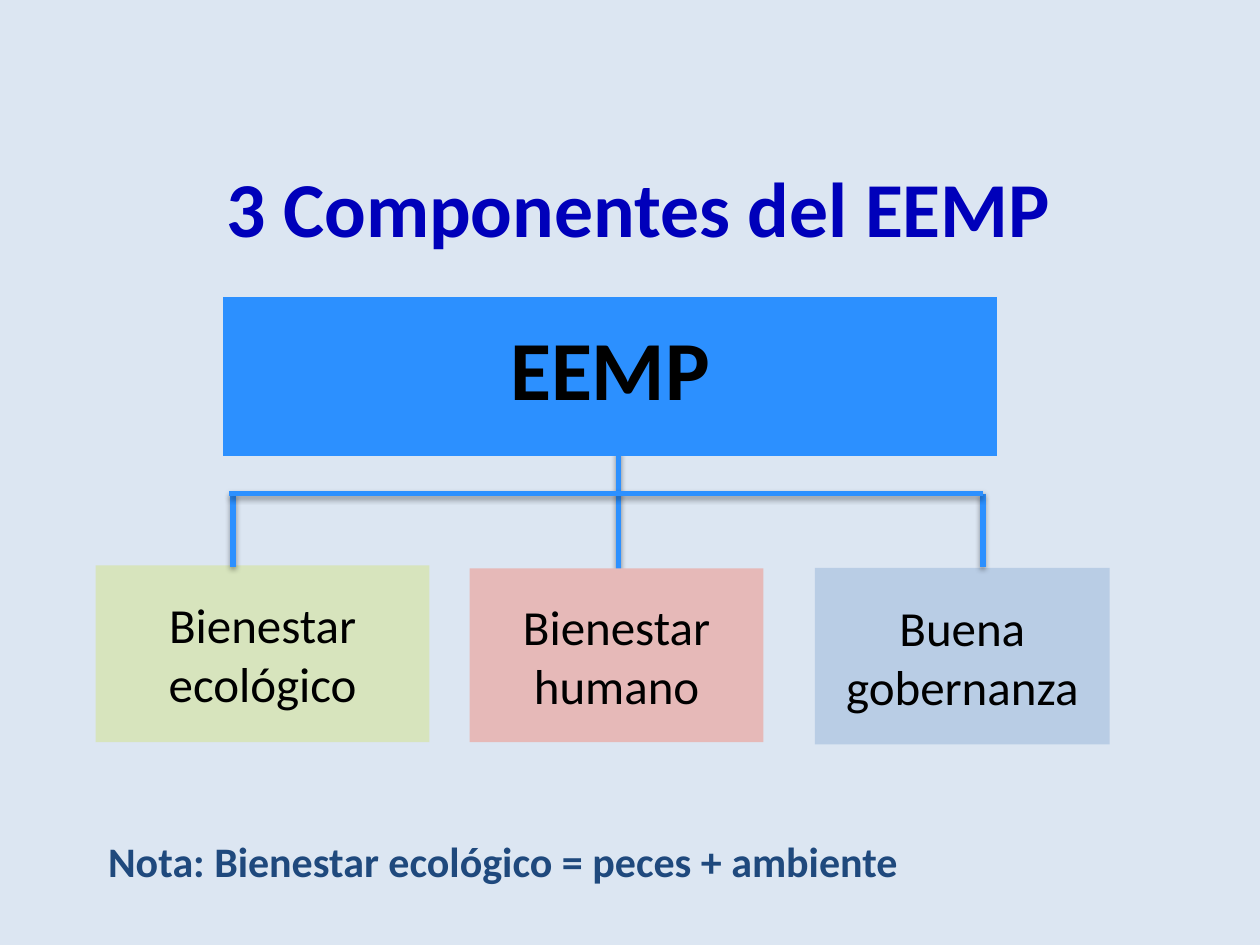
import pptx
import pptx.dml.color
import pptx.enum.shapes
import pptx.enum.text
import pptx.oxml
import pptx.oxml.ns
import pptx.util

Cm = pptx.util.Cm
Pt = pptx.util.Pt
RGBColor = pptx.dml.color.RGBColor
PP_ALIGN = pptx.enum.text.PP_ALIGN
MSO_ANCHOR = pptx.enum.text.MSO_ANCHOR

BACKGROUND = RGBColor(0xDC, 0xE6, 0xF2)
BLUE = RGBColor(0x2C, 0x90, 0xFF)
GREEN = RGBColor(0xD7, 0xE4, 0xBD)
PINK = RGBColor(0xE6, 0xB9, 0xB8)
PALE_BLUE = RGBColor(0xB9, 0xCD, 0xE5)
TITLE_BLUE = RGBColor(0x00, 0x00, 0xBA)
NOTE_BLUE = RGBColor(0x1F, 0x49, 0x7D)
BLACK = RGBColor(0, 0, 0)

LINE_SHADOW = (
    f'<a:effectLst {pptx.oxml.ns.nsdecls("a")}>'
    '<a:outerShdw blurRad="39370" dist="20320" dir="5400000" rotWithShape="0">'
    '<a:srgbClr val="000000"><a:alpha val="38000"/></a:srgbClr>'
    '</a:outerShdw></a:effectLst>'
)


def apply_format(target, values):
    for attribute, value in values.items():
        setattr(target, attribute, value)


def write_text(frame, text, size, color, bold=False, frame_format=None, paragraph_format=None):
    apply_format(frame, {"word_wrap": True} | (frame_format or {}))
    paragraph = frame.paragraphs[0]
    apply_format(paragraph, {"alignment": PP_ALIGN.CENTER} | (paragraph_format or {}))
    run = paragraph.add_run()
    run.text = text
    apply_format(run.font, {"name": "Calibri", "size": Pt(size), "bold": bold})
    run.font.color.rgb = color


def add_label(slide, bounds, text, size, color, **formats):
    label = slide.shapes.add_textbox(*map(Cm, bounds))
    write_text(label.text_frame, text, size, color, bold=True, **formats)


def add_box(slide, bounds, fill, text, size, **formats):
    box = slide.shapes.add_shape(
        pptx.enum.shapes.MSO_SHAPE.RECTANGLE, *map(Cm, bounds))
    box.shadow.inherit = False
    box.fill.solid()
    box.fill.fore_color.rgb = fill
    box.line.fill.background()
    write_text(box.text_frame, text, size, BLACK,
               frame_format={"vertical_anchor": MSO_ANCHOR.MIDDLE}, **formats)


def add_branch(slide, ends, width=3.25):
    """Draw one shadowed line of the tree from (x1, y1) to (x2, y2)."""
    branch = slide.shapes.add_connector(
        pptx.enum.shapes.MSO_CONNECTOR.STRAIGHT, *map(Cm, ends))
    branch.line.color.rgb = BLUE
    branch.line.width = Pt(width)
    branch._element.spPr.append(pptx.oxml.parse_xml(LINE_SHADOW))


def main():
    deck = pptx.Presentation()
    apply_format(deck, {"slide_width": Cm(25.4), "slide_height": Cm(19.05)})
    slide = deck.slides.add_slide(deck.slide_layouts[6])
    slide.background.fill.solid()
    slide.background.fill.fore_color.rgb = BACKGROUND

    left_x, right_x, trunk_x = 4.7, 19.81, 12.47
    bar_y, branch_end = 9.95, 11.42

    add_branch(slide, (trunk_x, 9.09, trunk_x, 11.96))
    add_label(slide, (1.98, 3.1, 21.44, 2.49), " 3 Componentes del EEMP", 44.4, TITLE_BLUE)
    add_box(slide, (4.5, 5.99, 15.6, 3.2), BLUE, "EEMP", 48, bold=True,
            paragraph_format={"line_spacing": 0.8, "space_after": Pt(6)})

    components = [
        ((1.93, 11.4, 6.73, 3.56), GREEN, "Bienestar ecológico"),
        ((9.47, 11.46, 5.92, 3.5), PINK, "Bienestar humano"),
        ((16.43, 11.45, 5.94, 3.56), PALE_BLUE, "Buena gobernanza"),
    ]
    for bounds, fill, text in components:
        add_box(slide, bounds, fill, text, 28)

    for x in (left_x, right_x):
        add_branch(slide, (x, bar_y, x, branch_end))
    add_branch(slide, (4.62, bar_y, right_x, bar_y), width=3)

    add_label(slide, (1.93, 16.71, 16.59, 1.27),
              "Nota: Bienestar ecológico = peces + ambiente", 24, NOTE_BLUE,
              frame_format={"word_wrap": False,
                            "auto_size": pptx.enum.text.MSO_AUTO_SIZE.SHAPE_TO_FIT_TEXT},
              paragraph_format={"alignment": PP_ALIGN.LEFT})

    deck.save("out.pptx")


if __name__ == "__main__":
    main()
